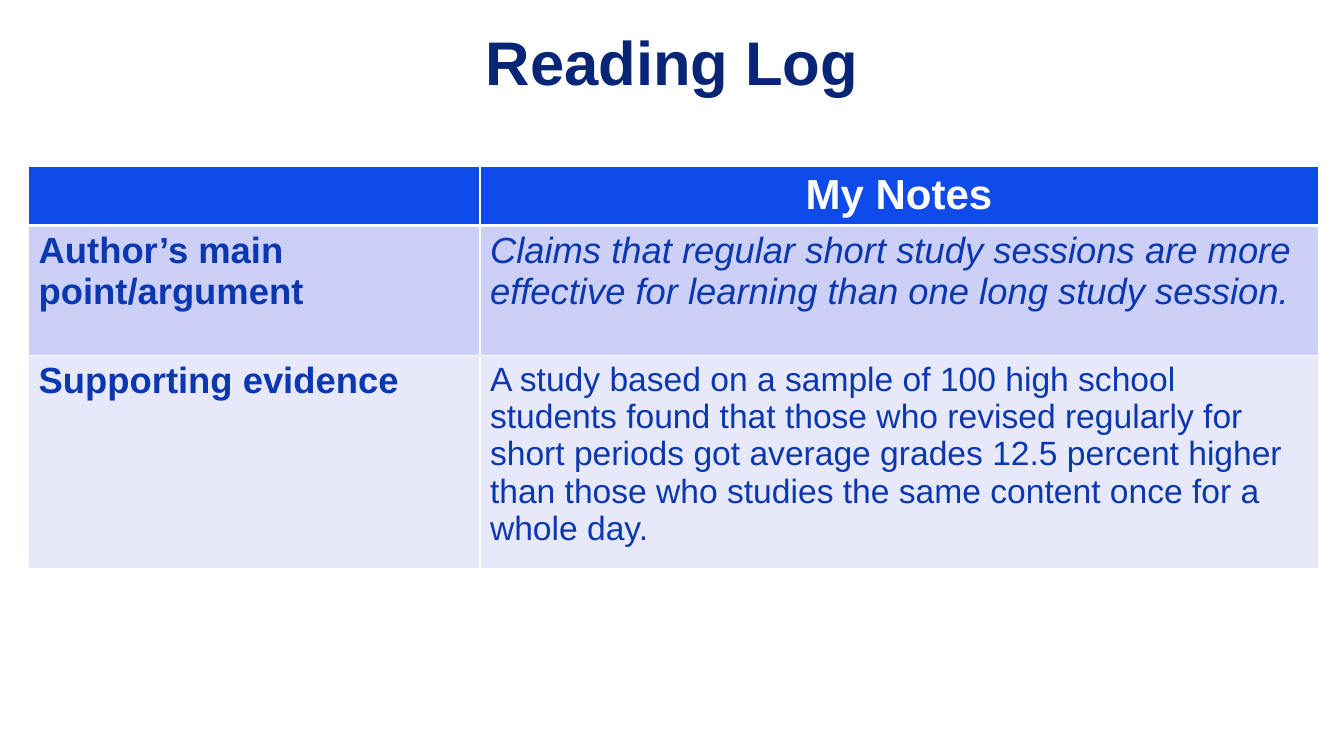
from pptx import Presentation
from pptx.dml.color import RGBColor
from pptx.enum import text
from pptx.oxml import parse_xml
from pptx.oxml.ns import nsdecls
from pptx.util import Cm, Pt

ROWS = [
    ("0F4BEB", 1.48, [("", 30, True, False), ("My Notes", 30, True, False)]),
    ("CCD0F7", 3.28, [
        ("Author’s main point/argument", 26, True, False),
        ("Claims that regular short study sessions are more effective for "
         "learning than one long study session.", 26, False, True)]),
    ("E7E9FB", 5.36, [
        ("Supporting evidence", 26, True, False),
        ("A study based on a sample of 100 high school students found that "
         "those who revised regularly for short periods got average grades "
         "12.5 percent higher than those who studies the same content once "
         "for a whole day.", 24, False, False)]),
]


def color(code):
    return RGBColor.from_string(code)


def style(para, size, code, bold, slant=False):
    for run in para.runs:
        font = run.font
        font.name = "Arial"
        font.size = Pt(size)
        font.bold = bold
        font.italic = slant
        font.color.rgb = color(code)


def border(cell, side, width):
    cell._tc.get_or_add_tcPr().append(parse_xml(
        f'<a:ln{side} {nsdecls("a")} w="{Pt(width)}"><a:solidFill>'
        f'<a:srgbClr val="FFFFFF"/></a:solidFill></a:ln{side}>'))


def title(slide, left, top, width, height):
    head = slide.shapes.title
    head.left, head.top, head.width, head.height = map(Cm, (left, top, width, height))
    frame = head.text_frame
    frame.text = "Reading Log"
    frame.word_wrap = True
    frame.vertical_anchor = text.MSO_ANCHOR.MIDDLE
    para = frame.paragraphs[0]
    para.alignment = text.PP_ALIGN.CENTER
    style(para, 44, "082576", True)


def notes(slide, left, top, width):
    height = sum(row[1] for row in ROWS)
    grid = slide.shapes.add_table(
        len(ROWS), 2, Cm(left), Cm(top), Cm(width), Cm(height)).table
    for col, share in zip(grid.columns, (0.35, 0.65)):
        col.width = Cm(width * share)
    for r, (fill, tall, items) in enumerate(ROWS):
        grid.rows[r].height = Cm(tall)
        for c, (words, size, bold, slant) in enumerate(items):
            cell = grid.cell(r, c)
            for side in "LRTB":
                thick = (r, side) in ((0, "B"), (1, "T"))
                border(cell, side, 3 if thick else 1)
            cell.fill.solid()
            cell.fill.fore_color.rgb = color(fill)
            cell.text_frame.text = words
            para = cell.text_frame.paragraphs[0]
            if r == 0:
                para.alignment = text.PP_ALIGN.CENTER
            style(para, size, "0B38B0" if r else "FFFFFF", bold, slant)


def main():
    deck = Presentation()
    deck.slide_width, deck.slide_height = Cm(33.87), Cm(19.05)
    slide = deck.slides.add_slide(deck.slide_layouts[5])
    title(slide, 6.5, 0.48, 20.88, 2.13)
    notes(slide, 0.72, 4.2, 32.5)
    deck.save("out.pptx")


if __name__ == "__main__":
    main()
